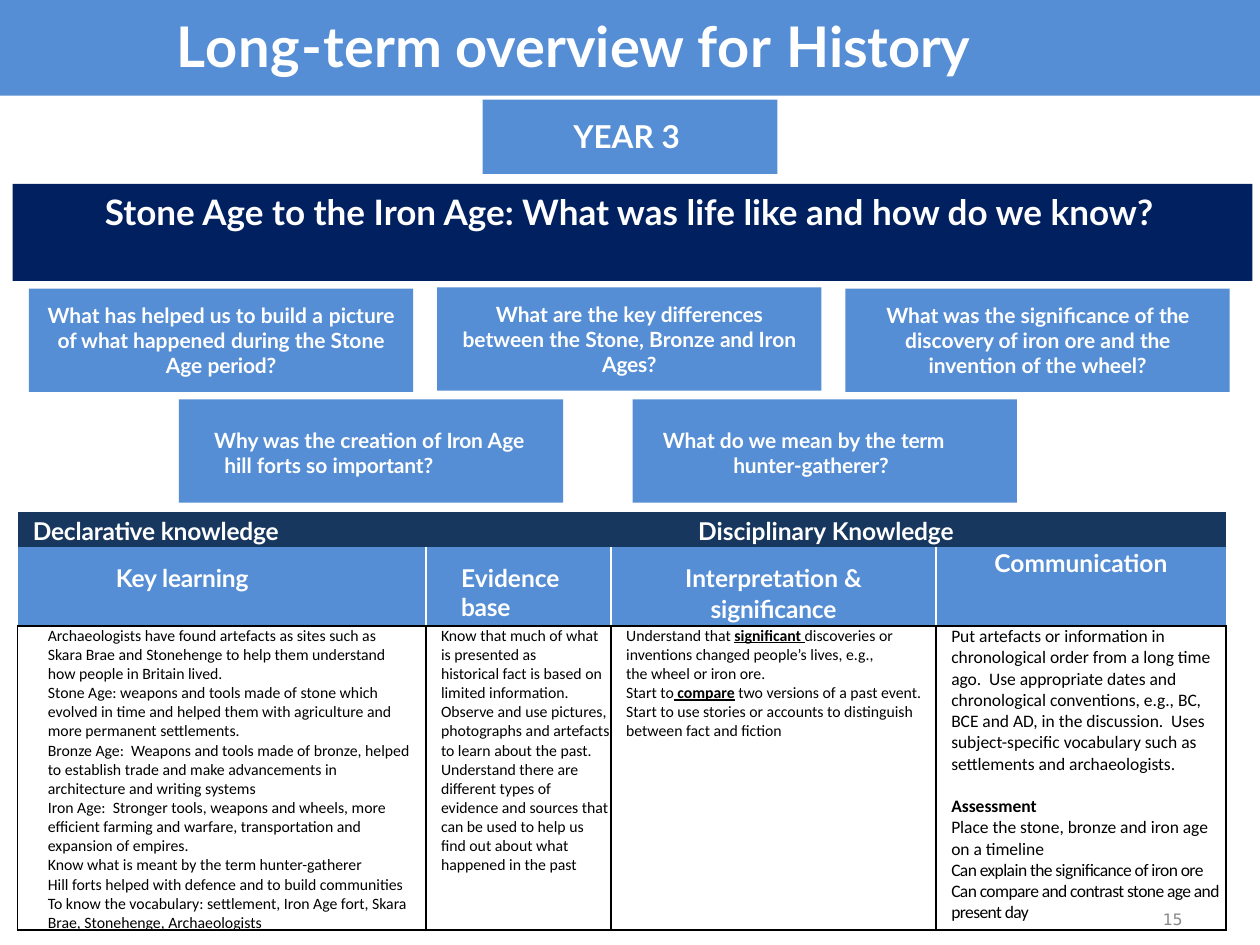
from dataclasses import dataclass

from lxml import etree
from pptx import Presentation
from pptx.dml.color import RGBColor
from pptx.enum import shapes, text
from pptx.oxml.ns import qn
from pptx.util import Inches, Pt

COLOURS = {"sky": "558ED5", "navy": "002060", "slate": "17375E",
           "white": "FFFFFF", "black": "000000", "grey": "888888"}
LEFT, CENTRE = text.PP_ALIGN.LEFT, text.PP_ALIGN.CENTER


def lato(size: int) -> dict:
    return {"name": "Lato", "size": Pt(size), "bold": True}


def calibri(size: int) -> dict:
    return {"name": "Calibri", "size": Pt(size), "bold": False}


STYLES = {
    "title": (lato(32), "white"),
    "theme": (lato(20), "white"),
    "year": (lato(18), "white"),
    "heading": (lato(14), "white"),
    "question": (lato(12), "white"),
    "knowledge": (calibri(9), "black"),
    "assessment": (calibri(10), "black"),
    "page": ({"name": "DejaVu Sans", "size": Pt(9), "bold": False}, "grey"),
}
KEY_TERM = {"bold": True, "underline": True}


@dataclass
class Run:
    words: str
    spacing: float = 0
    marks: dict | None = None


@dataclass
class Para:
    runs: list[Run]
    align: int = LEFT
    left: float = 0
    first: float = 0
    right: float = 0
    before: float = 0


@dataclass
class Block:
    left: float
    top: float
    width: float
    height: float
    style: str
    inset: float
    para: Para
    fill: str | None = None


@dataclass
class Cell:
    paras: list[Para]
    style: str
    inset_top: float = 0
    inset_side: float = 0
    fill: str | None = None


def colour(name: str) -> RGBColor:
    return RGBColor.from_string(COLOURS[name])


def write_paras(frame, paras: list[Para], style: str) -> None:
    font_values, font_colour = STYLES[style]
    for index, para in enumerate(paras):
        line = frame.paragraphs[0] if index == 0 else frame.add_paragraph()
        line.alignment = para.align
        line.space_before = Pt(para.before)
        indents = {"marL": para.left, "marR": para.right, "indent": para.first}
        for key, value in indents.items():
            line._p.get_or_add_pPr().set(key, str(Inches(value)))
        for part in para.runs:
            run = line.add_run()
            run.text = part.words
            for key, value in {**font_values, **(part.marks or {})}.items():
                setattr(run.font, key, value)
            run.font.color.rgb = colour(font_colour)
            if part.spacing:
                run._r.get_or_add_rPr().set("spc", str(round(part.spacing * 100)))


def draw_panel(slide, left: float, top: float, width: float, height: float, fill: str):
    panel = slide.shapes.add_shape(shapes.MSO_SHAPE.RECTANGLE, Inches(left), Inches(top),
                                   Inches(width), Inches(height))
    panel.shadow.inherit = False
    panel.fill.solid()
    panel.fill.fore_color.rgb = colour(fill)
    panel.line.fill.background()
    return panel


def draw_block(slide, block: Block) -> None:
    place = (block.left, block.top, block.width, block.height)
    if block.fill:
        holder = draw_panel(slide, *place, block.fill)
    else:
        holder = slide.shapes.add_textbox(*map(Inches, place))
    frame_values = {"margin_left": 0, "margin_right": 0, "margin_bottom": 0,
                    "margin_top": Inches(block.inset), "word_wrap": True,
                    "vertical_anchor": text.MSO_ANCHOR.TOP}
    for key, value in frame_values.items():
        setattr(holder.text_frame, key, value)
    write_paras(holder.text_frame, [block.para], block.style)


def set_borders(cell, borders: dict[str, str]) -> None:
    """Draw the named sides (L, R, T, B) and clear the others."""
    properties = cell._tc.get_or_add_tcPr()
    for index, side in enumerate("LRTB"):
        line = etree.Element(qn(f"a:ln{side}"), w=str(Pt(1)))
        if side in borders:
            fill = etree.SubElement(line, qn("a:solidFill"))
            etree.SubElement(fill, qn("a:srgbClr"), val=COLOURS[borders[side]])
        else:
            etree.SubElement(line, qn("a:noFill"))
        properties.insert(index, line)


def borders_for(row: int, column: int, last: int) -> dict[str, str]:
    if row == 0:
        return {}
    if row == 2:
        return dict.fromkeys("LRTB", "black")
    borders = {"B": "black"}
    if column > 0:
        borders["L"] = "white"
    if column < last:
        borders["R"] = "white"
    return borders


def draw_table(slide, rows: list[list[Cell | None]]) -> None:
    widths, heights = [3.24, 1.47, 2.58, 2.3], [0.28, 0.63, 2.41]
    table = slide.shapes.add_table(len(heights), len(widths), Inches(0.14), Inches(4.06),
                                   Inches(sum(widths)), Inches(sum(heights))).table
    table.first_row = table.horz_banding = False
    for column, width in zip(table.columns, widths):
        column.width = Inches(width)
    for row, height in zip(table.rows, heights):
        row.height = Inches(height)
    table.cell(0, 1).merge(table.cell(0, 3))
    for r, row in enumerate(rows):
        for c, content in enumerate(row):
            cell = table.cell(r, c)
            set_borders(cell, borders_for(r, c, len(widths) - 1))
            if content is None:
                continue
            side = Inches(content.inset_side)
            margins = {"margin_left": side, "margin_right": side,
                       "margin_top": Inches(content.inset_top), "margin_bottom": 0}
            for key, value in margins.items():
                setattr(cell, key, value)
            if content.fill:
                cell.fill.solid()
                cell.fill.fore_color.rgb = colour(content.fill)
            else:
                cell.fill.background()
            write_paras(cell.text_frame, content.paras, content.style)


def point(*runs: str | Run, before: float = 0) -> Para:
    return Para([Run(r) if isinstance(r, str) else r for r in runs], left=0.12, before=before)


def question(left: float, top: float, para: Para, inset: float = 0.11) -> Block:
    return Block(left, top, 3.05, 0.82, "question", inset, para, "sky")


BLOCKS = [
    Block(0.94, -0.18, 8.11, 0.82, "title", 0.27, Para(
        [Run("Long-", 0.6), Run("term overview "), Run("for ", 0.6), Run("History", -0.1)], left=0.46)),
    Block(0.23, 1.5, 9.53, 0.35, "theme", 0.01, Para(
        [Run("Stone Age to the Iron Age: What was life like and how do we know?")], CENTRE)),
    question(0.23, 2.29, Para(
        [Run("What has helped us to build "), Run("a ", 0.2), Run("picture of what happened "),
         Run("during ", -0.1), Run("the Stone Age "), Run("period?", -0.1)], CENTRE, 0.12, right=0.12)),
    question(6.71, 2.29, Para(
        [Run("What was the significance of "), Run("the ", -0.2), Run("discovery of iron ore and "),
         Run("the ", -0.2), Run("invention of the "), Run("wheel?", -0.1)], CENTRE, 0.13, right=0.13)),
    question(3.47, 2.28, Para(
        [Run("What are the key "), Run("differences ", -0.1), Run("between the Stone, Bronze "),
         Run("and ", -0.2), Run("Iron "), Run("Ages?", -0.1)], CENTRE, 0.2, right=0.2)),
    question(1.42, 3.17, Para(
        [Run("Why was the creation of "), Run("Iron ", -0.2), Run("Age hill forts so "),
         Run("important?", -0.1)], left=0.36, first=-0.08, right=0.26), 0.22),
    question(5.02, 3.17, Para(
        [Run("What do we mean by the "), Run("term ", -0.2), Run("hunter-gatherer?", -0.1)],
        left=0.8, first=-0.56, right=0.24), 0.22),
    Block(3.83, 0.79, 2.34, 0.59, "year", 0.14, Para([Run("YEAR "), Run("3", -0.5)], left=0.72), "sky"),
]
PAGE_NUMBER = Block(9.19, 7.21, 0.23, 0.18, "page", 0.01, Para([Run("15", -0.2)], left=0.04))

KNOWLEDGE = [
    [Cell([point(Run("Declarative knowledge", -0.1))], "heading", 0.04, fill="slate"),
     Cell([Para([Run("Disciplinary "), Run("Knowledge", -0.1)], CENTRE)], "heading", 0.04, fill="slate"),
     None, None],
    [Cell([Para([Run("Key learning", -0.1)], left=0.78)], "heading", 0.13, fill="sky"),
     Cell([Para([Run("Evidence "), Run("base", -0.2)], left=0.28)], "heading", 0.13, fill="sky"),
     Cell([Para([Run("Interpretation "), Run("&", -0.5)], CENTRE),
           Para([Run("significance", -0.1)], CENTRE, before=1.2)], "heading", 0.13, fill="sky"),
     Cell([Para([Run("Communication")], CENTRE)], "heading", 0.01, fill="sky")],
    [Cell([point(fact) for fact in (
        "Archaeologists have found artefacts as sites such as Skara Brae and Stonehenge to help them understand how people in Britain lived.",
        "Stone Age: weapons and tools made of stone which evolved in time and helped them with agriculture and more permanent settlements.",
        "Bronze Age:  Weapons and tools made of bronze, helped to establish trade and make advancements in architecture and writing systems",
        "Iron Age:  Stronger tools, weapons and wheels, more efficient farming and warfare, transportation and expansion of empires.",
        "Know what is meant by the term hunter-gatherer",
        "Hill forts helped with defence and to build communities",
        "To know the vocabulary: settlement, Iron Age fort, Skara Brae, Stonehenge, Archaeologists",
    )], "knowledge", inset_side=0.12),
     Cell([point(fact) for fact in (
         "Know that much of what is presented as",
         "historical fact is based on limited information.",
         "Observe and use pictures, photographs and artefacts to learn about the past.",
         "Understand there are different types of evidence and sources that can be used to help us find out about what happened in the past",
     )], "knowledge"),
     Cell([point("Understand that ", Run("significant ", marks=KEY_TERM),
                 "discoveries or inventions changed people’s lives, e.g.,"),
           point("the wheel or iron ore."),
           point("Start to", Run(" compare", marks=KEY_TERM), " two versions of a past event."),
           point("Start to use stories or accounts to distinguish between fact and fiction")], "knowledge"),
     Cell([point("Put artefacts or information in chronological order from a long time ago.  Use appropriate dates and chronological conventions, e.g., BC, BCE and AD, in the discussion.  Uses subject-specific vocabulary such as settlements and archaeologists."),
           point(Run("Assessment", marks={"bold": True}), before=12.2),
           point("Place the stone, bronze and iron age on a timeline"),
           point(Run("Can explain the significance of iron ore", -0.3)),
           point(Run("Can compare and contrast stone age and present day", -0.3))], "assessment")],
]


def main() -> None:
    deck = Presentation()
    deck.slide_width, deck.slide_height = Inches(10), Inches(7.5)
    slide = deck.slides.add_slide(deck.slide_layouts[6])
    draw_panel(slide, 0, 0, 10, 0.76, "sky")
    draw_panel(slide, 0.1, 1.46, 9.84, 0.77, "navy")
    for block in BLOCKS:
        draw_block(slide, block)
    draw_table(slide, KNOWLEDGE)
    draw_block(slide, PAGE_NUMBER)
    deck.save("out.pptx")


if __name__ == "__main__":
    main()
